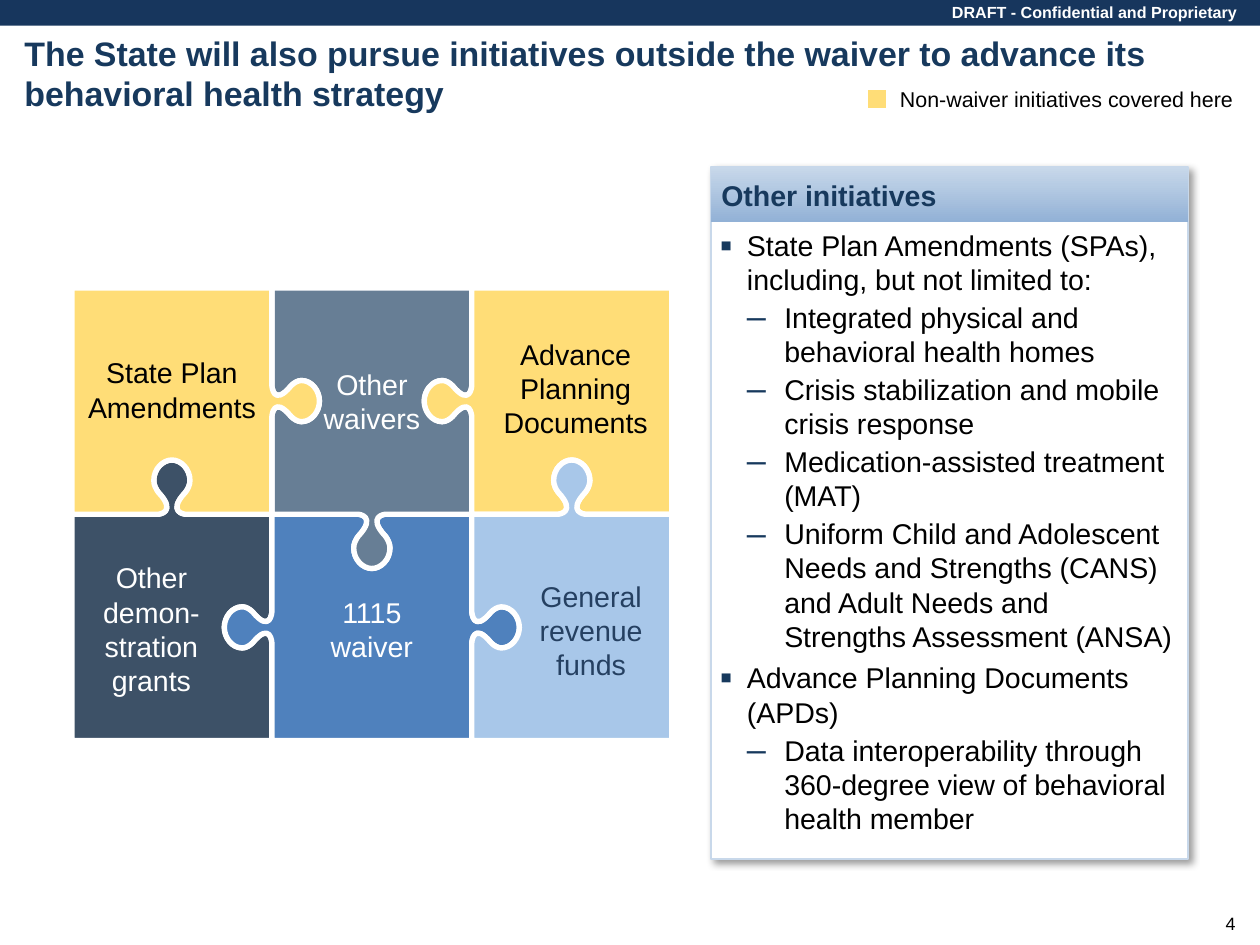
from lxml import etree
from pptx import Presentation
from pptx import util as u
from pptx.dml.color import RGBColor
from pptx.enum import shapes, text
from pptx.oxml.ns import qn

WIDE, HIGH = 9.8, 7.35
FONT = "Arial"
INK = {
    "black": "000000", "white": "FFFFFF", "bar": "17365D", "navy": "17395D",
    "slate": "1E354F", "blue": "4F81BD", "sky": "81AFE0", "gold": "FFDD77",
    "deep": "254061", "pale": "C8D8EA", "mid": "92B1D6",
}
LEFT, MID, RIGHT = text.PP_ALIGN.LEFT, text.PP_ALIGN.CENTER, text.PP_ALIGN.RIGHT
TOP, HALF = text.MSO_ANCHOR.TOP, text.MSO_ANCHOR.MIDDLE

# Puzzle grid: left, top, column width, row height
X0, Y0, COL, ROW = 0.56, 2.24, 1.555, 1.76
# Half a knob as Bezier points: (along the edge, out of the edge)
KNOB = [(-.12, 0), (-.12, 0), (.05, .01), (-.12, .15), (-.14, .17), (-.16, .2),
        (-.16, .23), (-.16, .31), (-.08, .37), (0, .37)]
# Which way the knob of an inner edge points: 1 is right or down
ACROSS = {(1, 0): 1, (2, 0): -1, (1, 1): -1, (2, 1): 1}
DOWN = {0: -1, 1: 1, 2: -1}
# Column, row, fill, opacity, label, label colour, label shift x and y, label width
TILES = [
    (0, 1, "slate", 86, "Other demon-stration grants", "white", -.16, .01, .99),
    (1, 1, "blue", 100, "1115\nwaiver", "white", 0, .01, 1.56),
    (1, 0, "navy", 65, "Other waivers", "white", 0, 0, .82),
    (2, 0, "gold", 100, "Advance Planning Documents", "black", .03, -.1, 1.18),
    (0, 0, "gold", 100, "State Plan Amendments", "black", 0, -.09, 1.38),
    (2, 1, "sky", 69, "General revenue funds", "deep", .15, .02, 1.09),
]
# Level, bullet, size in percent, left edge, hanging indent, space before
STYLES = {1: ("▪", 125, .21, .21, 4), 2: ("–", 120, .5, .29, 2)}
ITEMS = [
    (1, "State Plan Amendments (SPAs), including, but not limited to:"),
    (2, "Integrated physical and behavioral health homes"),
    (2, "Crisis stabilization and mobile crisis response"),
    (2, "Medication-assisted treatment (MAT)"),
    (2, "Uniform Child and Adolescent Needs and Strengths (CANS) "
        "and Adult Needs and Strengths Assessment (ANSA)"),
    (1, "Advance Planning Documents (APDs)"),
    (2, "Data interoperability through 360-degree view of behavioral health member"),
]


def rgb(name):
    return RGBColor.from_string(INK[name])


def put(obj, **vals):
    for key, val in vals.items():
        setattr(obj, key, val)


def box(x, y, w, h):
    return [u.Inches(v) for v in (x, y, w, h)]


def sub(node, tag, **attrs):
    return etree.SubElement(node, qn(tag), {k: str(v) for k, v in attrs.items()})


def frame(shape, inset=0, anchor=TOP):
    body, pad = shape.text_frame, u.Inches(inset)
    put(body, word_wrap=True, auto_size=text.MSO_AUTO_SIZE.NONE,
        vertical_anchor=anchor, margin_left=pad, margin_right=pad,
        margin_top=pad, margin_bottom=pad)
    return body


def write(shape, words, size, ink, bold=False, align=LEFT, anchor=TOP, inset=0):
    body = frame(shape, inset, anchor)
    body.text = words
    for para in body.paragraphs:
        para.alignment = align
        put(para.font, name=FONT, size=u.Pt(size), bold=bold)
        para.font.color.rgb = rgb(ink)


def label(slide, place, words, size, ink, **look):
    write(slide.shapes.add_textbox(*box(*place)), words, size, ink, **look)


def paint(shape, fill, line=None, width=1):
    shape.shadow.inherit = False
    shape.fill.solid()
    shape.fill.fore_color.rgb = rgb(fill)
    if line:
        shape.line.color.rgb = rgb(line)
        shape.line.width = u.Pt(width)
    else:
        shape.line.fill.background()


def rect(slide, place, fill, line=None, width=1):
    shape = slide.shapes.add_shape(shapes.MSO_SHAPE.RECTANGLE, *box(*place))
    paint(shape, fill, line, width)
    return shape


def edge(a, b, way):
    """Bezier points from corner a to corner b, with a knob at the middle if way is set."""
    if not way:
        return [b] * 3
    whole = KNOB + [(-s, o) for s, o in KNOB[-2::-1]]
    mx, my = (a[0] + b[0]) / 2, (a[1] + b[1]) / 2
    if a[1] == b[1]:
        turn = 1 if b[0] > a[0] else -1
        pts = [(mx + .88 * s * turn, my + 1.14 * o * way) for s, o in whole]
    else:
        turn = 1 if b[1] > a[1] else -1
        pts = [(mx + o * way, my + s * turn) for s, o in whole]
    return pts[:1] * 3 + pts[1:] + [b] * 3


def bend(shape):
    """Turn each three straight steps of an outline into one Bezier curve."""
    steps = list(shape._element.iter(qn("a:lnTo")))
    for trio in zip(steps[::3], steps[1::3], steps[2::3]):
        arc = etree.Element(qn("a:cubicBezTo"))
        trio[0].addprevious(arc)
        for step in trio:
            arc.append(step[0])
            step.getparent().remove(step)


def tile(slide, col, row, fill, alpha):
    x, y = X0 + col * COL, Y0 + row * ROW
    ends = [(x, y), (x + COL, y), (x + COL, y + ROW), (x, y + ROW), (x, y)]
    ways = [DOWN[col] if row else 0, ACROSS.get((col + 1, row)),
            0 if row else DOWN[col], ACROSS.get((col, row))]
    pts = [(u.Inches(px), u.Inches(py)) for a, b, way in zip(ends, ends[1:], ways)
           for px, py in edge(a, b, way)]
    pen = slide.shapes.build_freeform(u.Inches(x), u.Inches(y))
    pen.add_line_segments(pts, close=False)
    shape = pen.add_line_segments([], close=True).convert_to_shape()
    bend(shape)
    paint(shape, fill, "white", 3)
    if alpha < 100:
        tint = shape.fill._xPr.find(qn("a:solidFill"))[0]
        sub(tint, "a:alpha", val=alpha * 1000)


def puzzle(slide):
    for col, row, fill, alpha, *_ in TILES:
        tile(slide, col, row, fill, alpha)
    for col, row, _, _, words, ink, dx, dy, w in TILES:
        x, y = X0 + (col + .5) * COL + dx, Y0 + (row + .5) * ROW + dy
        label(slide, (x - w / 2, y - .54, w, 1.08), words, 16, ink,
              align=MID, anchor=HALF)


def shade(shape):
    """Add a soft shadow to the lower right."""
    cast = sub(shape._element.spPr.find(qn("a:effectLst")), "a:outerShdw",
               blurRad=u.Pt(4), dist=u.Pt(3), dir=45 * 60000, algn="tl", rotWithShape=0)
    sub(sub(cast, "a:srgbClr", val=INK["black"]), "a:alpha", val=40000)


def bullets(slide, place):
    body = frame(slide.shapes.add_textbox(*box(*place)))
    for i, (level, words) in enumerate(ITEMS):
        para = body.paragraphs[0] if i == 0 else body.add_paragraph()
        mark, size, left, hang, gap = STYLES[level]
        para.text = words
        para.level = level
        props = para._p.get_or_add_pPr()
        props.set("marL", str(u.Inches(left)))
        props.set("indent", str(-u.Inches(hang)))
        sub(sub(props, "a:buClr"), "a:srgbClr", val=INK["navy"])
        sub(props, "a:buSzPct", val=size * 1000)
        sub(props, "a:buFont", typeface=FONT)
        sub(props, "a:buChar", char=mark)
        para.space_before = u.Pt(gap if i else 0)
        put(para.font, name=FONT, size=u.Pt(16))
        para.font.color.rgb = rgb("black")


def panel(slide, x, y, w, h, head):
    shade(rect(slide, (x, y, w, h), "white", "pale"))
    band = rect(slide, (x, y, w, head), "pale")
    band.fill.gradient()
    band.fill.gradient_angle = 270
    for stop, ink, spot in zip(band.fill.gradient_stops, ("pale", "mid"), (0, 1)):
        stop.color.rgb = rgb(ink)
        stop.position = spot
    write(band, "Other initiatives", 16, "navy", bold=True, anchor=HALF, inset=.08)
    bullets(slide, (x + .07, y + head + .04, w - .16, h - head - .13))


def heading(slide):
    title = slide.shapes.title
    put(title, **dict(zip(("left", "top", "width", "height"), box(.19, .25, 9.43, .64))))
    write(title, "The State will also pursue initiatives outside the waiver "
          "to advance its behavioral health strategy", 19, "navy", bold=True)


def main():
    deck = Presentation()
    put(deck, slide_width=u.Inches(WIDE), slide_height=u.Inches(HIGH))
    slide = deck.slides.add_slide(deck.slide_layouts[5])
    rect(slide, (0, 0, WIDE, .2), "bar")
    label(slide, (7.38, .02, 2.24, .15), "DRAFT - Confidential and Proprietary", 9,
          "white", bold=True, align=RIGHT, anchor=HALF)
    label(slide, (9.44, 7.1, .17, .17), "4", 10, "black", align=RIGHT, anchor=HALF)
    heading(slide)
    puzzle(slide)
    panel(slide, 5.53, 1.3, 3.71, 5.38, .43)
    label(slide, (7, .67, 2.61, .2), "Non-waiver initiatives covered here", 12, "black")
    rect(slide, (6.73, .68, .18, .18), "gold", "white", 3)
    deck.save("out.pptx")


if __name__ == "__main__":
    main()
